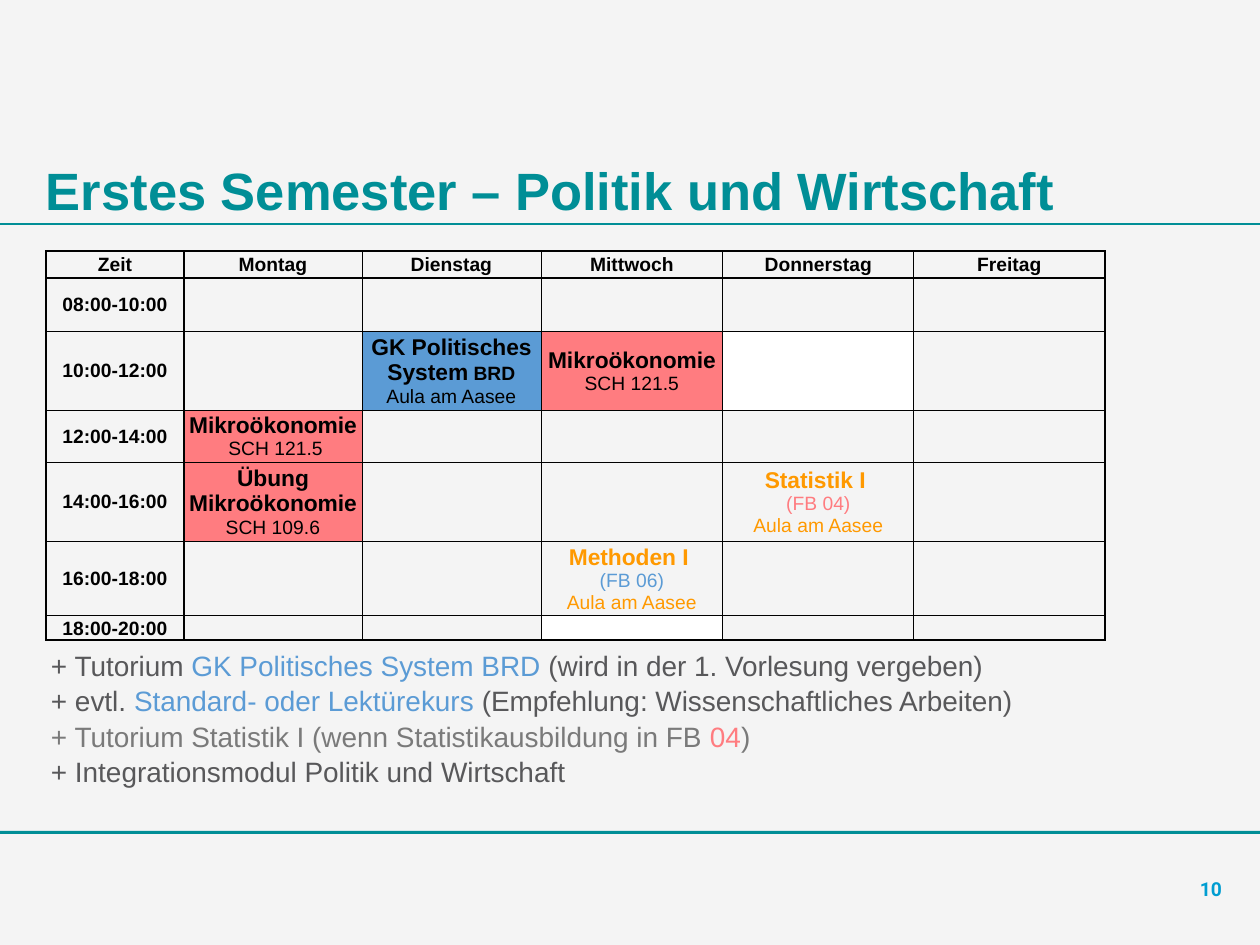
from lxml import etree
from pptx import Presentation
from pptx.dml.color import RGBColor
from pptx.enum.shapes import MSO_CONNECTOR, MSO_SHAPE
from pptx.enum.text import MSO_ANCHOR, PP_ALIGN
from pptx.oxml.ns import qn
from pptx.util import Inches, Pt

PX = Inches(1) // 126
MIDDLE, BOTTOM = MSO_ANCHOR.MIDDLE, MSO_ANCHOR.BOTTOM
LEFT, CENTER, RIGHT = PP_ALIGN.LEFT, PP_ALIGN.CENTER, PP_ALIGN.RIGHT
TITLE_ONLY = 5

TEAL, GREY, LIGHT_GREY = "008E96", "58585A", "7A7A7A"
BLUE, PINK, ORANGE = "5B9BD5", "FF7C80", "FF9900"
BLACK, WHITE, PAPER, CYAN = "000000", "FFFFFF", "F4F4F4", "009DD1"


def rgb(color):
    return RGBColor.from_string(color)


def course(text, color=BLACK):
    return (text, color, 13, True)


def detail(text, color=BLACK, bold=False):
    return (text, color, 11, bold)


class Deck:
    """Holds the style and the current slide; all lengths are in px."""

    font = "Arial"

    def __init__(self):
        self.prs = Presentation()
        self.prs.slide_width, self.prs.slide_height = Inches(10), Inches(7.5)
        self.s = self.prs.slides.add_slide(self.prs.slide_layouts[TITLE_ONLY])
        self.s.background.fill.solid()
        self.s.background.fill.fore_color.rgb = rgb(PAPER)

    def fill_text(self, tf, paragraphs, align=LEFT, spacing=None, font=None):
        """Fill a text frame with paragraphs of (text, color, size, bold) runs."""
        for i, runs in enumerate(paragraphs):
            p = tf.add_paragraph() if i else tf.paragraphs[0]
            p.alignment = align
            if spacing:
                p.line_spacing = spacing
            for text, color, size, bold in runs:
                r = p.add_run()
                r.text = text
                r.font.name = font or self.font
                r.font.size, r.font.bold = Pt(size), bold
                r.font.color.rgb = rgb(color)

    def place(self, sp, x, y, w, h):
        sp.left, sp.top, sp.width, sp.height = (v * PX for v in (x, y, w, h))

    def inset(self, box, left, top, right, bottom):
        box.margin_left, box.margin_top = left * PX, top * PX
        box.margin_right, box.margin_bottom = right * PX, bottom * PX

    def title(self, text, x, y, w, h):
        sp = self.s.shapes.title
        self.place(sp, x, y, w, h)
        tf = sp.text_frame
        self.inset(tf, 0, 0, 0, 0)
        tf.vertical_anchor = MIDDLE
        self.fill_text(tf, [[(text, TEAL, 30, True)]])

    def text(self, paragraphs, x, y, w, h, inset=(0, 0, 0, 0), anchor=None, **style):
        tf = self.s.shapes.add_textbox(x * PX, y * PX, w * PX, h * PX).text_frame
        tf.word_wrap = True
        tf.vertical_anchor = anchor
        self.inset(tf, *inset)
        self.fill_text(tf, paragraphs, **style)

    def bar(self, x, y, w, h):
        sp = self.s.shapes.add_shape(MSO_SHAPE.RECTANGLE, x * PX, y * PX, w * PX, h * PX)
        sp.shadow.inherit = False
        sp.fill.solid()
        sp.fill.fore_color.rgb = rgb(TEAL)
        sp.line.fill.background()

    def rule(self, x1, y, x2):
        line = self.s.shapes.add_connector(
            MSO_CONNECTOR.STRAIGHT, x1 * PX, y * PX, x2 * PX, y * PX)
        line.line.color.rgb = rgb(TEAL)
        line.line.width = Pt(1)
        etree.SubElement(line._element.spPr, qn("a:effectLst"))

    def borders(self, cell, **widths):
        """Draw the cell edges L, R, T and B in the given point widths."""
        tc_pr = cell._tc.get_or_add_tcPr()
        for i, (side, width) in enumerate(widths.items()):
            ln = etree.Element(qn(f"a:ln{side}"), w=str(Pt(width)))
            fill = etree.SubElement(ln, qn("a:solidFill"))
            etree.SubElement(fill, qn("a:srgbClr"), val=BLACK)
            tc_pr.insert(i, ln)

    def timetable(self, days, times, lessons, fills, x, y, cols, rows):
        """Lessons and fills are keyed by (row, column)."""
        table = self.s.shapes.add_table(
            len(rows), len(cols), x * PX, y * PX, sum(cols) * PX, sum(rows) * PX).table
        table.first_row = table.horz_banding = False
        for col, w in zip(table.columns, cols):
            col.width = w * PX
        for row, h in zip(table.rows, rows):
            row.height = h * PX

        headings = {(0, c): [[detail(day, bold=True)]] for c, day in enumerate(days)}
        headings |= {(r, 0): [[detail(time, bold=True)]] for r, time in enumerate(times, 1)}
        content = headings | lessons
        last_row, last_col = len(rows) - 1, len(cols) - 1
        for r in range(len(rows)):
            for c in range(len(cols)):
                cell = table.cell(r, c)
                self.inset(cell, 1, 1, 1, 0)
                cell.vertical_anchor = MIDDLE
                if (r, c) in fills:
                    cell.fill.solid()
                    cell.fill.fore_color.rgb = rgb(fills[r, c])
                else:
                    cell.fill.background()
                self.borders(
                    cell,
                    L=1 if c <= 1 else 0.5,
                    R=1 if c in (0, last_col) else 0.5,
                    T=1 if r <= 1 else 0.5,
                    B=1 if r in (0, last_row) else 0.5)
                if (r, c) in content:
                    self.fill_text(cell.text_frame, content[r, c], CENTER)
                else:  # keeps empty rows from growing to the default text size
                    p = cell.text_frame.paragraphs[0]
                    p._p.get_or_add_endParaRPr().set("sz", "1100")


DAYS = ["Zeit", "Montag", "Dienstag", "Mittwoch", "Donnerstag", "Freitag"]
TIMES = [f"{hour:02}:00-{hour + 2:02}:00" for hour in range(8, 20, 2)]
HALL = "Aula am Aasee"
LESSONS = {
    (2, 2): [[course("GK Politisches System"), detail(" BRD", bold=True)], [detail(HALL)]],
    (2, 3): [[course("Mikroökonomie")], [detail("SCH 121.5")]],
    (3, 1): [[course("Mikroökonomie")], [detail(" SCH 121.5")]],
    (4, 1): [[course("Übung Mikroökonomie")], [detail("SCH 109.6")]],
    (4, 4): [[course("Statistik I ", ORANGE)], [detail("(FB 04)", PINK)],
             [detail(HALL, ORANGE)]],
    (5, 3): [[course("Methoden I ", ORANGE)], [detail("(FB 06)", BLUE)],
             [detail(HALL, ORANGE)]],
}
FILLS = {(1, 1): PAPER, (2, 2): BLUE, (2, 3): PINK, (2, 4): WHITE,
         (3, 1): PINK, (3, 2): PAPER, (4, 1): PINK, (6, 3): WHITE}
NOTES = [
    [("+ Tutorium ", GREY), ("GK Politisches System BRD ", BLUE),
     ("(wird in der 1. Vorlesung vergeben)", GREY)],
    [("+ evtl. ", GREY), ("Standard- oder Lektürekurs ", BLUE),
     ("(Empfehlung: Wissenschaftliches Arbeiten)", GREY)],
    [("+ Tutorium Statistik I (wenn Statistikausbildung in FB ", LIGHT_GREY),
     ("04", PINK), (")", LIGHT_GREY)],
    [("+ Integrationsmodul Politik und Wirtschaft", GREY)],
]


def main():
    deck = Deck()
    deck.bar(0, 831, 1260, 3)
    deck.rule(0, 224, 1260)
    deck.title("Erstes Semester – Politik und Wirtschaft", 46, 155, 1101, 69)
    deck.text([[(text, color, 16, False) for text, color in runs] for runs in NOTES],
              39, 641, 1032, 182, inset=(12, 6, 12, 6), spacing=1.05)
    deck.timetable(DAYS, TIMES, LESSONS, FILLS, 46, 251,
                   cols=[138, 178, 179, 182, 191, 191],
                   rows=[27, 53, 79, 52, 79, 75, 24])
    deck.text([[("10", CYAN, 11, True)]], 1148, 851, 74, 49,
              anchor=BOTTOM, align=RIGHT, font="Roboto")
    deck.prs.save("out.pptx")


if __name__ == "__main__":
    main()
